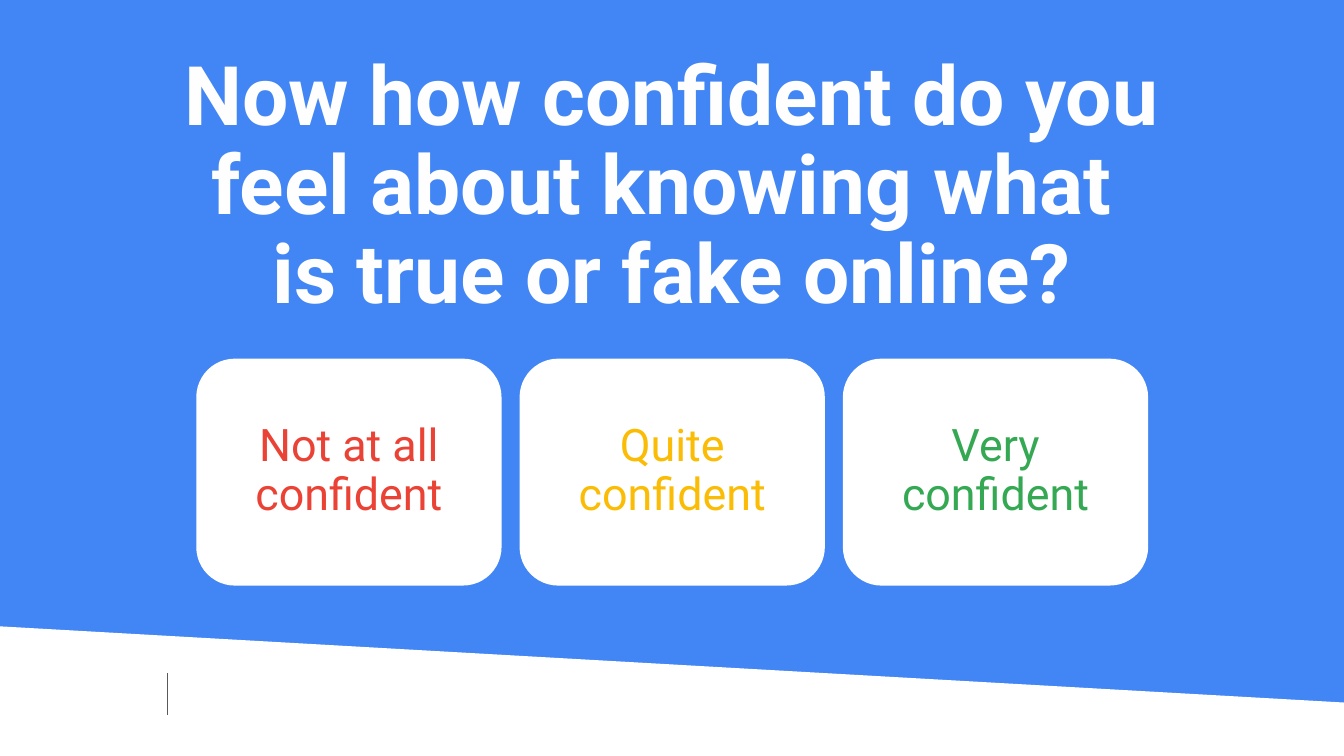
from lxml.etree import SubElement
from pptx import Presentation
from pptx.dml.color import RGBColor
from pptx.enum.shapes import MSO_CONNECTOR, MSO_SHAPE
from pptx.enum.text import MSO_ANCHOR, PP_ALIGN
from pptx.oxml.ns import qn
from pptx.util import Cm, Pt

WIDTH, HEIGHT = 25.4, 14.29
BLUE, WHITE, GREY = "4285F4", "FFFFFF", "595959"
CARD_LEFT, CARD_TOP, CARD_WIDTH, CARD_HEIGHT = 3.71, 6.78, 5.77, 4.29
CARD_STEP = 6.11
ANSWERS = [
    ("Not at all confident", "EA4335"),
    ("Quite\nconfident", "FBBC05"),
    ("Very\nconfident", "34A853"),
]


def paint(fill, colour):
    fill.solid()
    fill.fore_color.rgb = RGBColor.from_string(colour)


def place(box, left, top, width, height):
    box.left, box.top = Cm(left), Cm(top)
    box.width, box.height = Cm(width), Cm(height)


def write(box, text, *, size, colour, bold=False):
    """Fill a box with one centred paragraph, without inner margins."""
    frame = box.text_frame
    frame.word_wrap = True
    frame.vertical_anchor = MSO_ANCHOR.TOP
    frame.margin_left = frame.margin_right = 0
    frame.margin_top = frame.margin_bottom = 0
    para = frame.paragraphs[0]
    para.text = text
    para.alignment = PP_ALIGN.CENTER
    para.line_spacing = 0.9
    para.space_before = Pt(0)
    for span in para.runs:
        span.font.name = "Roboto"
        span.font.size = Pt(size)
        span.font.bold = bold
        span.font.color.rgb = RGBColor.from_string(colour)


def add_slanted_footer(page):
    builder = page.shapes.build_freeform(Cm(0), Cm(11.84))
    corners = [(0, HEIGHT), (WIDTH, HEIGHT), (WIDTH, 13.28)]
    builder.add_line_segments([(Cm(x), Cm(y)) for x, y in corners], close=True)
    footer = builder.convert_to_shape()
    footer.shadow.inherit = False
    paint(footer.fill, WHITE)
    footer.line.fill.background()


def add_divider(page, x, top, bottom):
    divider = page.shapes.add_connector(
        MSO_CONNECTOR.STRAIGHT, Cm(x), Cm(top), Cm(x), Cm(bottom))
    divider.line.width = Pt(0.75)
    paint(divider.line.fill, GREY)
    SubElement(divider._element.spPr, qn("a:effectLst"))


def add_title(page, text):
    title = page.shapes.title
    place(title, 2.59, 1.04, 20.22, 5.08)
    write(title, text, size=44, colour="FEFEFE", bold=True)


def add_card(page, left, answer, colour):
    card = page.shapes.add_shape(
        MSO_SHAPE.ROUNDED_RECTANGLE,
        Cm(left), Cm(CARD_TOP), Cm(CARD_WIDTH), Cm(CARD_HEIGHT))
    card.adjustments[0] = 0.17
    card.shadow.inherit = False
    paint(card.fill, WHITE)
    card.line.fill.background()
    label = page.shapes.add_textbox(Cm(left), Cm(8), Cm(CARD_WIDTH), Cm(1.85))
    write(label, answer, size=24, colour=colour)


def main():
    deck = Presentation()
    deck.slide_width, deck.slide_height = Cm(WIDTH), Cm(HEIGHT)
    title_only = deck.slide_layouts[5]
    page = deck.slides.add_slide(title_only)
    paint(page.background.fill, BLUE)

    add_slanted_footer(page)
    add_divider(page, 3.17, 12.72, 13.51)
    add_title(page, "Now how confident do you feel about knowing what \n"
                    "is true or fake online?")
    for index, (answer, colour) in enumerate(ANSWERS):
        add_card(page, CARD_LEFT + index * CARD_STEP, answer, colour)

    deck.save("out.pptx")


if __name__ == "__main__":
    main()
